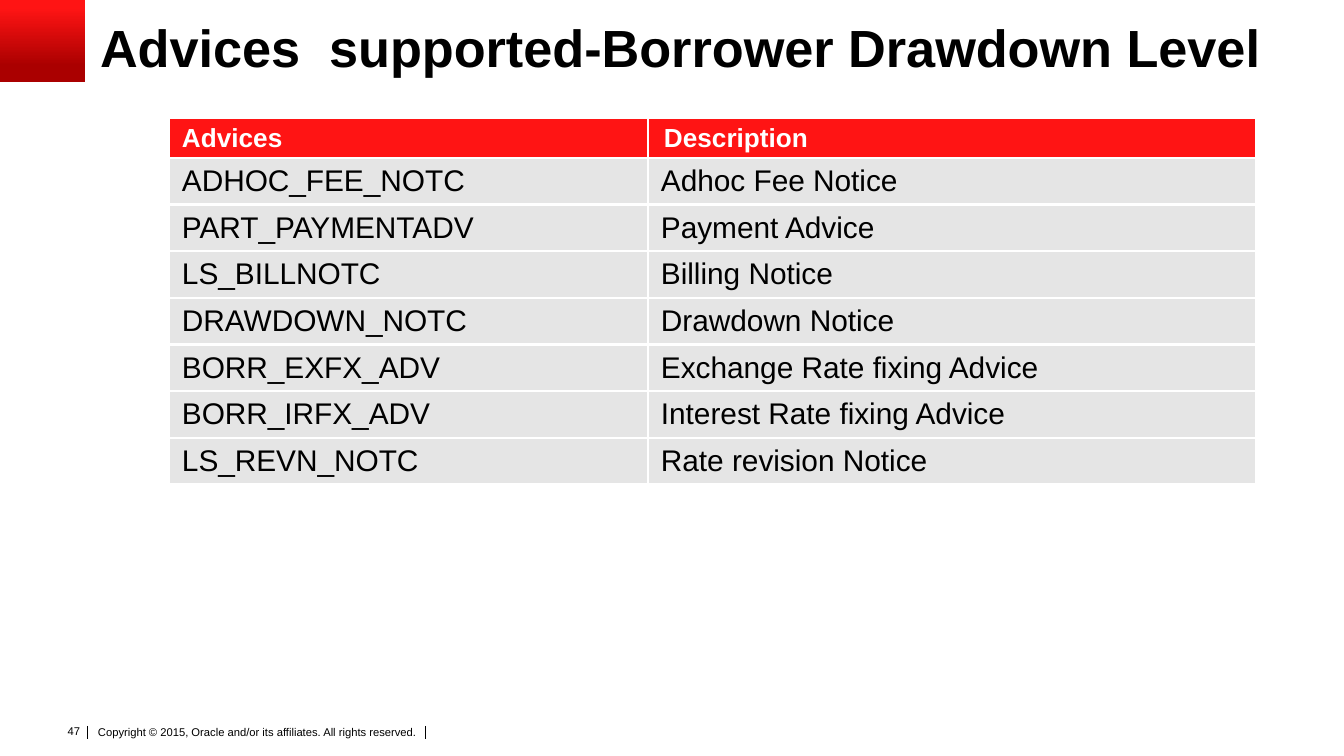
from lxml import etree
from pptx import Presentation
from pptx import util as u
from pptx.dml.color import RGBColor
from pptx.enum import shapes, text
from pptx.oxml.ns import qn

# Content
TITLE = "Advices  supported-Borrower Drawdown Level"
PAGE_NUMBER = "47"
COPYRIGHT = "Copyright © 2015, Oracle and/or its affiliates. All rights reserved."
HEADER = ("Advices", "Description")
ADVICES = [
    ("ADHOC_FEE_NOTC", "Adhoc Fee Notice"),
    ("PART_PAYMENTADV", "Payment Advice"),
    ("LS_BILLNOTC", "Billing Notice"),
    ("DRAWDOWN_NOTC", "Drawdown Notice"),
    ("BORR_EXFX_ADV", "Exchange Rate fixing Advice"),
    ("BORR_IRFX_ADV", "Interest Rate fixing Advice"),
    ("LS_REVN_NOTC", "Rate revision Notice"),
]

# Style and layout, lengths in px
FONT = "Arial"
BLACK = RGBColor(0x00, 0x00, 0x00)
WHITE = RGBColor(0xFF, 0xFF, 0xFF)
RED = RGBColor(0xFF, 0x14, 0x14)
DARK_RED = RGBColor(0xAA, 0x00, 0x00)
GREY = RGBColor(0xE5, 0xE5, 0xE5)
SLIDE_SIZE = (1344, 756)
TABLE_LEFT, TABLE_TOP, TABLE_HEIGHT = 169, 118, 367
COLUMN_WIDTHS = (479, 608)
HEADER_HEIGHT = 40
DIVIDERS = (87, 426)


def px(length):
    return u.Emu(round(length * 914400 / 134.4))


def write(frame, words, size, color=BLACK, bold=False, align=text.PP_ALIGN.LEFT,
          anchor=text.MSO_ANCHOR.TOP, margins=(0, 0), wrap=True, line_spacing=None):
    frame.word_wrap = wrap
    frame.vertical_anchor = anchor
    frame.margin_left = frame.margin_right = px(margins[0])
    frame.margin_top = frame.margin_bottom = px(margins[1])
    frame.text = words
    paragraph = frame.paragraphs[0]
    paragraph.alignment = align
    paragraph.line_spacing = line_spacing
    font = paragraph.runs[0].font
    font.name, font.size, font.bold = FONT, u.Pt(size), bold
    font.color.rgb = color


def add_borders(cell, color, width):
    properties = cell._tc.get_or_add_tcPr()
    for index, side in enumerate(("lnL", "lnR", "lnT", "lnB")):
        line = etree.Element(qn("a:" + side), w=str(u.Pt(width)))
        fill = etree.SubElement(line, qn("a:solidFill"))
        etree.SubElement(fill, qn("a:srgbClr"), val=str(color))
        properties.insert(index, line)


def fill_cell(cell, words, fill, size, color=BLACK, bold=False):
    cell.fill.solid()
    cell.fill.fore_color.rgb = fill
    add_borders(cell, WHITE, 1.5)
    write(cell.text_frame, words, size, color=color, bold=bold)
    cell.margin_left = cell.margin_right = px(13)
    cell.margin_top = cell.margin_bottom = px(5)
    cell.vertical_anchor = text.MSO_ANCHOR.MIDDLE


presentation = Presentation()
presentation.slide_width, presentation.slide_height = map(px, SLIDE_SIZE)
slide = presentation.slides.add_slide(presentation.slide_layouts[5])

# Red corner block
corner = slide.shapes.add_shape(shapes.MSO_SHAPE.RECTANGLE, 0, 0, px(85), px(82))
corner.shadow.inherit = False
corner.line.fill.background()
corner.fill.gradient()
corner.fill.gradient_angle = 90
for stop, position, color in zip(corner.fill.gradient_stops, (0.2, 0.9), (DARK_RED, RED)):
    stop.position = position
    stop.color.rgb = color

# Title
title = slide.shapes.title
title.left, title.top, title.width, title.height = map(px, (100, 20, 1210, 59))
write(title.text_frame, TITLE, 28, bold=True, anchor=text.MSO_ANCHOR.BOTTOM, line_spacing=0.9)

# Advice table
table = slide.shapes.add_table(
    len(ADVICES) + 1, len(HEADER), px(TABLE_LEFT), px(TABLE_TOP),
    px(sum(COLUMN_WIDTHS)), px(TABLE_HEIGHT)).table
for column, width in zip(table.columns, COLUMN_WIDTHS):
    column.width = px(width)
for row in table.rows:
    row.height = px((TABLE_HEIGHT - HEADER_HEIGHT) / len(ADVICES))
table.rows[0].height = px(HEADER_HEIGHT)
for column_index, words in enumerate(HEADER):
    fill_cell(table.cell(0, column_index), words, RED, 14, color=WHITE, bold=True)
table.cell(0, 1).margin_left = px(16)
for row_index, advice in enumerate(ADVICES, start=1):
    for column_index, words in enumerate(advice):
        fill_cell(table.cell(row_index, column_index), words, GREY, 16)

# Footer
page_box = slide.shapes.add_textbox(px(52), px(718), px(41), px(26))
write(page_box.text_frame, PAGE_NUMBER, 6, align=text.PP_ALIGN.RIGHT, margins=(13, 7), wrap=False)
copyright_box = slide.shapes.add_textbox(px(93), px(722), px(368), px(32))
write(copyright_box.text_frame, COPYRIGHT, 6, margins=(5, 3))
for x in DIVIDERS:
    divider = slide.shapes.add_connector(
        shapes.MSO_CONNECTOR.STRAIGHT, px(x), px(726), px(x), px(739))
    divider.line.color.rgb = BLACK
    divider.line.width = u.Pt(0.5)
    etree.SubElement(divider._element.spPr, qn("a:effectLst"))

presentation.save("out.pptx")
